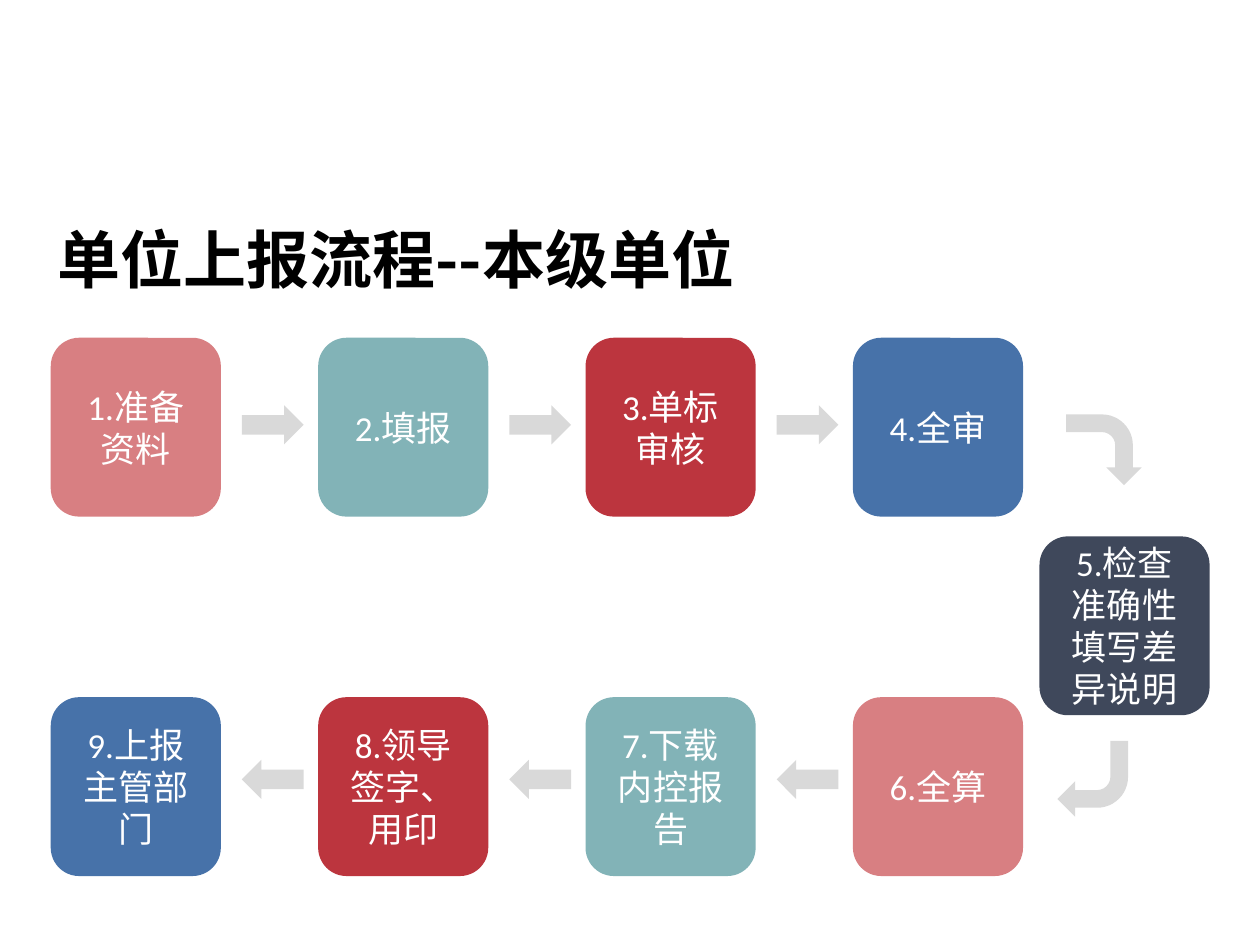
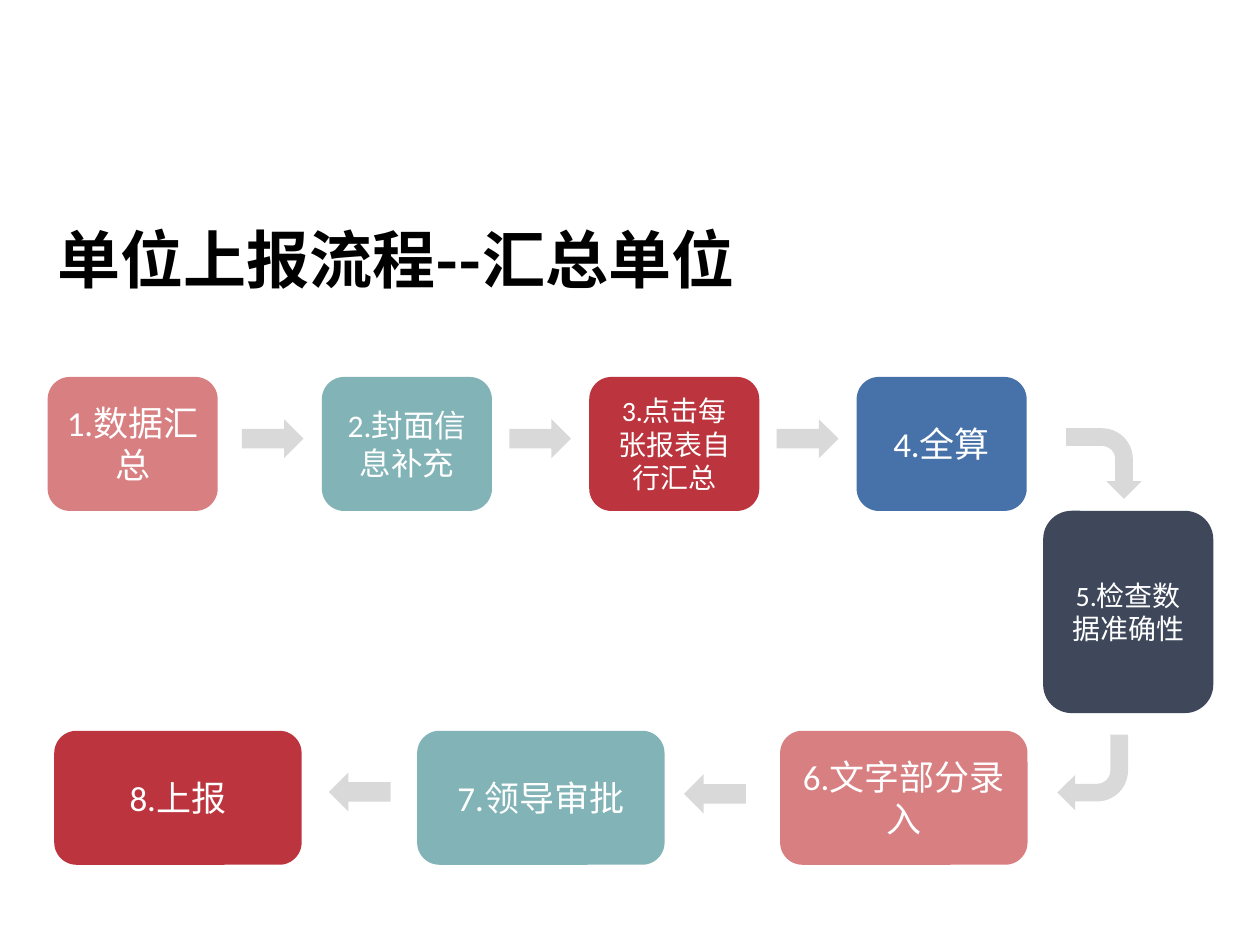
from lxml import etree
from pptx import Presentation
from pptx.dml.color import RGBColor
from pptx.enum.shapes import MSO_SHAPE
from pptx.enum.text import MSO_ANCHOR, MSO_AUTO_SIZE, PP_ALIGN
from pptx.oxml.ns import qn
from pptx.util import Pt

ROUNDED = MSO_SHAPE.ROUNDED_RECTANGLE
RIGHT = MSO_SHAPE.RIGHT_ARROW
LEFT = MSO_SHAPE.LEFT_ARROW
BENT = MSO_SHAPE.BENT_ARROW
CENTER = PP_ALIGN.CENTER
MIDDLE = MSO_ANCHOR.MIDDLE
TOP = MSO_ANCHOR.TOP
GROW = MSO_AUTO_SIZE.SHAPE_TO_FIT_TEXT

# Shared colours, fonts and sizes
PINK, TEAL, RED, BLUE, NAVY = "D87F82", "82B3B7", "BC353E", "4772A9", "3F485B"
ARROW_GREY, WHITE, BLACK = "D9D9D9", "FFFFFF", "000000"
CJK_FONT = "Noto Sans CJK SC"
TITLE_STYLE = {"size": Pt(36), "bold": True, "name": CJK_FONT}
STEP_STYLE = {"size": Pt(20), "bold": False, "name": "Calibri"}
ARROW_W, ARROW_H = 35.3, 22.3
BENT_W, BENT_H = 40.4, 43.2
STEP_W, PITCH = 97.2, 152.8
ARROW_LEFTS = [138.2 + PITCH * column for column in range(3)]


def add_block(page, preset, left, top, width, height, color):
    block = page.shapes.add_shape(preset, Pt(left), Pt(top), Pt(width), Pt(height))
    block.shadow.inherit = False
    block.fill.solid()
    block.fill.fore_color.rgb = RGBColor.from_string(color)
    block.line.fill.background()
    return block


def write(box, lines, style, color):
    frame = box.text_frame
    frame.word_wrap = True
    for number, line in enumerate(lines):
        para = frame.add_paragraph() if number else frame.paragraphs[0]
        span = para.add_run()
        span.text = line
        for name, value in style.items():
            setattr(span.font, name, value)
        span.font.color.rgb = RGBColor.from_string(color)
        east_asian = etree.SubElement(span.font._element, qn("a:ea"))
        east_asian.set("typeface", CJK_FONT)
    return frame


# Each step: text lines, size, colour, left, top, width, height
own_tops, own_height = (193, 398.4), 102.2
own_steps = [
    (text, 20, color, 29 + PITCH * column, own_tops[row], STEP_W, own_height)
    for row, column, text, color in [
        (0, 0, "1.准备资料", PINK),
        (0, 1, "2.填报", TEAL),
        (0, 2, "3.单标审核", RED),
        (0, 3, "4.全审", BLUE),
        (1, 3, "6.全算", PINK),
        (1, 2, "7.下载内控报告", TEAL),
        (1, 1, "8.领导签字、用印", RED),
        (1, 0, "9.上报主管部门", BLUE),
    ]
]
own_steps.insert(
    4, ("5.检查准确性\n填写差异说明", 20, NAVY, 594, 306.5, STEP_W, own_height))

summary_height = 76.6
summary_steps = [
    (text, size, color, left, 215.4, STEP_W, summary_height)
    for text, size, color, left in [
        ("1.数据汇总", 20, PINK, 27.2),
        ("2.封面信息补充", 18, TEAL, 183.9),
        ("3.点击每张报表自行汇总", 16, RED, 336.7),
        ("4.全算", 20, BLUE, 489.5),
    ]
]
summary_steps.append(("5.检查数据准确性", 16, NAVY, 596.1, 291.9, STEP_W, 115.6))
summary_steps += [
    (text, 20, color, 445.8 - 207.4 * place, 417.6, 141.4, summary_height)
    for place, (text, color) in enumerate(
        [("6.文字部分录入", PINK), ("7.领导审批", TEAL), ("8.上报", RED)])
]

# Each page: title, steps, top of right arrows, places of left arrows,
# tops of the bent arrows
flows = [
    ("单位上报流程--本级单位", own_steps, 231.6,
     [(left, 434.2) for left in ARROW_LEFTS], (235.4, 423.4)),
    ("单位上报流程--汇总单位", summary_steps, 239.5,
     [(187.9, 441.4), (390.9, 442.5)], (243.3, 419.8)),
]

deck = Presentation()
deck.slide_width, deck.slide_height = Pt(720), Pt(540)

for title, steps, right_top, left_arrows, bent_tops in flows:
    page = deck.slides.add_slide(deck.slide_layouts[6])

    # Title
    title_box = page.shapes.add_textbox(Pt(20.2), Pt(122.4), Pt(669.6), Pt(51))
    frame = write(title_box, [title], TITLE_STYLE, BLACK)
    frame.margin_left = Pt(12.6)
    frame.vertical_anchor = TOP
    frame.auto_size = GROW

    # Steps
    for text, size, color, *place in steps:
        step = add_block(page, ROUNDED, *place, color)
        style = {**STEP_STYLE, "size": Pt(size)}
        frame = write(step, text.split("\n"), style, WHITE)
        frame.vertical_anchor = MIDDLE
        for para in frame.paragraphs:
            para.alignment = CENTER

    # Straight arrows
    arrows = [(RIGHT, left, right_top) for left in ARROW_LEFTS]
    arrows += [(LEFT, left, top) for left, top in left_arrows]
    for preset, left, top in arrows:
        add_block(page, preset, left, top, ARROW_W, ARROW_H, ARROW_GREY)

    # Bent arrows around the corner step
    for left, top, turn in zip((610.6, 604.2), bent_tops, (90, 180)):
        bend = add_block(page, BENT, left, top, BENT_W, BENT_H, ARROW_GREY)
        bend.rotation = turn

deck.save("out.pptx")
